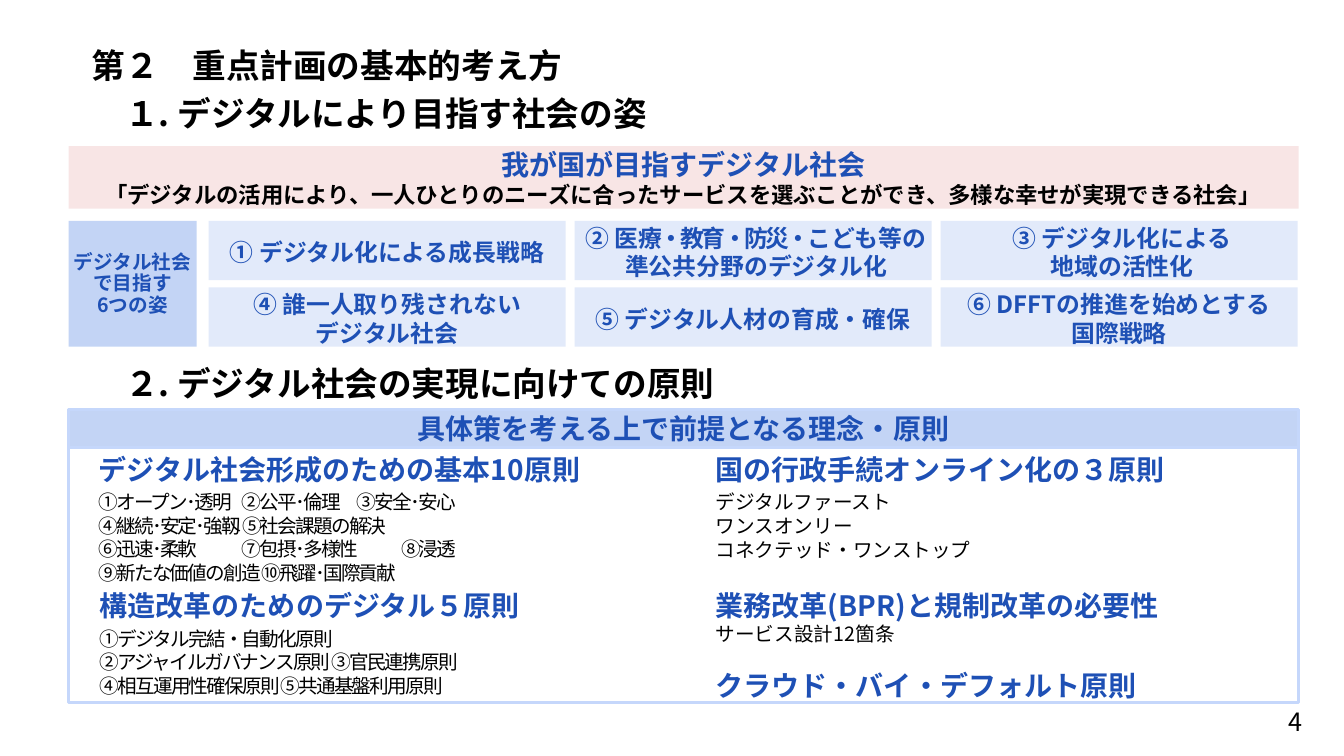
from lxml.etree import SubElement
from pptx import Presentation
from pptx.dml.color import RGBColor
from pptx.enum.shapes import MSO_SHAPE as Preset
from pptx.enum.text import MSO_ANCHOR as Anchor, MSO_AUTO_SIZE as AutoSize, PP_ALIGN as Align
from pptx.oxml.ns import qn
from pptx.util import Inches, Pt

TITLE = "第２　重点計画の基本的考え方\n　１. デジタルにより目指す社会の姿"
SECTION = "　２. デジタル社会の実現に向けての原則"
PAGE_NUMBER = "4"
VISION = ("我が国が目指すデジタル社会",
          "「デジタルの活用により、一人ひとりのニーズに合ったサービスを選ぶことができ、"
          "多様な幸せが実現できる社会」")
GOALS_LABEL = ["デジタル社会", "で目指す", "6つの姿"]
# Each goal: its lines, then its right inset; a line may be (text, tracking) pieces
GOALS = [
    (["① デジタル化による成長戦略"], 0.1),
    ([[("② 医", 0), ("療・教育・防災・こ", -2), ("ども等の", 0)],
      "準公共分野のデジタル化"], 0.04),
    (["③ デジタル化による", "地域の活性化"], 0.04),
    (["④ 誰一人取り残されない", "デジタル社会"], 0.1),
    (["⑤ デジタル人材の育成・確保"], 0.1),
    (["⑥ DFFTの推進を始めとする", "国際戦略"], 0.1),
]
PRINCIPLES_HEADER = "具体策を考える上で前提となる理念・原則"
# Box, heading, body, body tracking, space after heading
PRINCIPLES = [
    ((0.88, 4.44, 6.23, 0.93), "デジタル社会形成のための基本10原則",
     "①オープン･透明\t②公平･倫理\t③安全･安心\n④継続･安定･強靱 ⑤社会課題の解決\n"
     "⑥迅速･柔軟\t⑦包摂･多様性\t⑧浸透\n⑨新たな価値の創造 ⑩飛躍･国際貢献", -1.3, 3),
    ((0.89, 5.79, 5.91, 1.19), "構造改革のためのデジタル５原則",
     "①デジタル完結・自動化原則\n②アジャイルガバナンス原則 ③官民連携原則\n"
     "④相互運用性確保原則 ⑤共通基盤利用原則", -1.3, 3),
    ((7, 4.44, 5.5, 0.65), "国の行政手続オンライン化の３原則",
     "デジタルファースト\nワンスオンリー\nコネクテッド・ワンストップ", 0, 3),
    ((7, 5.79, 5.72, 0.67), "業務改革(BPR)と規制改革の必要性", "サービス設計12箇条", 0, 0),
    ((7, 6.58, 5.65, 0.44), "クラウド・バイ・デフォルト原則", "", 0, 0),
]
TAB_STOPS = (1.42, 2.56)

THEME = {
    "font": "Noto Sans CJK JP",
    "ink": RGBColor.from_string("000000"),
    "blue": RGBColor.from_string("1E50B5"),
    "vision": RGBColor.from_string("C00000"),
    "label": RGBColor.from_string("C3D4F5"),
    "goal": RGBColor.from_string("E2EAFA"),
    "frame": RGBColor.from_string("C5D7FB"),
    "title_size": 24, "heading_size": 20, "page_size": 18,
    "goal_size": 17, "vision_size": 16, "body_size": 14,
}
LEFT, WIDTH = 0.68, 12.2
GOAL_LEFT, GOAL_TOP, GOAL_W, GOAL_H = 2.07, 2.19, 3.54, 0.59
GOAL_STEP_X, GOAL_STEP_Y, GOAL_COLUMNS = 3.63, 0.66, 3


def apply(target, formats):
    for name, value in formats.items():
        setattr(target, name, value)


def add_piece(paragraph, text, size, color, bold, tracking):
    run = paragraph.add_run()
    run.text = text
    apply(run.font, {"size": Pt(size), "bold": bold, "name": THEME["font"]})
    run.font.color.rgb = THEME[color]
    props = run.font._element
    SubElement(props, qn("a:ea"), typeface=THEME["font"])
    if tracking:
        props.set("spc", str(round(tracking * 100)))


def write(frame, line, size, color, bold=True, align=Align.LEFT, leading=1.2,
          after=0, tracking=0):
    """Add one paragraph, using the frame's first paragraph while it is empty."""
    first = frame.paragraphs[0]
    paragraph = frame.add_paragraph() if first.runs else first
    apply(paragraph, {"alignment": align, "line_spacing": Pt(round(size * leading, 1)),
                      "space_before": Pt(0), "space_after": Pt(after)})
    pieces = [(line, tracking)] if isinstance(line, str) else line
    for text, piece_tracking in pieces:
        for index, part in enumerate(text.split("\n")):
            if index:
                paragraph.add_line_break()
            add_piece(paragraph, part, size, color, bold, piece_tracking)
    return paragraph


def set_tab_stops(paragraph):
    tabs = SubElement(paragraph._p.get_or_add_pPr(), qn("a:tabLst"))
    for stop in TAB_STOPS:
        SubElement(tabs, qn("a:tab"), pos=str(Inches(stop)), algn="l")


def add_text(slide, box, anchor=Anchor.TOP):
    frame = slide.shapes.add_textbox(*map(Inches, box)).text_frame
    apply(frame, {"word_wrap": True, "vertical_anchor": anchor})
    return frame


def add_panel(slide, box, fill=None, line=None, margins=(0.1, 0.05, 0.1, 0.05)):
    panel = slide.shapes.add_shape(Preset.RECTANGLE, *map(Inches, box))
    panel.shadow.inherit = False
    if fill:
        panel.fill.solid()
        panel.fill.fore_color.rgb = THEME[fill]
    else:
        panel.fill.background()
    if line:
        panel.line.color.rgb = THEME[line]
        panel.line.width = Pt(2.25)
    else:
        panel.line.fill.background()
    sides = ("margin_left", "margin_top", "margin_right", "margin_bottom")
    apply(panel.text_frame, dict(zip(sides, map(Inches, margins))))
    apply(panel.text_frame, {"word_wrap": True, "vertical_anchor": Anchor.MIDDLE})
    return panel


def add_headings(slide):
    title = slide.shapes.title
    apply(title, dict(zip(("left", "top", "width", "height"),
                          map(Inches, (0.81, 0.32, 12.95, 0.51)))))
    apply(title.text_frame, {"word_wrap": True, "vertical_anchor": Anchor.TOP,
                             "auto_size": AutoSize.NONE})
    write(title.text_frame, TITLE, THEME["title_size"], "ink", leading=1.43)
    write(add_text(slide, (0.81, 3.55, 6.88, 0.5)), SECTION, THEME["title_size"], "ink")
    write(add_text(slide, (11.59, 6.96, 1.43, 0.4), Anchor.MIDDLE), PAGE_NUMBER,
          THEME["page_size"], "ink", bold=False, align=Align.RIGHT)


def add_vision(slide):
    panel = add_panel(slide, (LEFT, 1.45, WIDTH, 0.62), "vision")
    color = panel._element.spPr.find(qn("a:solidFill"))[0]
    SubElement(color, qn("a:alpha"), val="10000")
    panel.text_frame.word_wrap = False
    heading, statement = VISION
    write(panel.text_frame, heading, THEME["heading_size"], "blue", align=Align.CENTER)
    write(panel.text_frame, statement, THEME["vision_size"], "ink", align=Align.CENTER)


def add_goals(slide):
    label = add_panel(slide, (LEFT, GOAL_TOP, 1.27, 1.25), "label",
                      margins=(0.04, 0.05, 0.04, 0.05))
    for line in GOALS_LABEL:
        write(label.text_frame, line, THEME["body_size"], "blue",
              align=Align.CENTER, leading=1.1)
    for index, (lines, right_inset) in enumerate(GOALS):
        row, column = divmod(index, GOAL_COLUMNS)
        box = (GOAL_LEFT + column * GOAL_STEP_X, GOAL_TOP + row * GOAL_STEP_Y,
               GOAL_W, GOAL_H)
        goal = add_panel(slide, box, "goal", margins=(0.1, 0.08, right_inset, 0.05))
        for line in lines:
            write(goal.text_frame, line, THEME["goal_size"], "blue", align=Align.CENTER)


def add_principles(slide):
    for box, heading, body, tracking, gap in PRINCIPLES:
        frame = add_text(slide, box)
        write(frame, heading, THEME["heading_size"], "blue", after=gap)
        if body:
            rules = write(frame, body, THEME["body_size"], "ink", bold=False,
                          tracking=tracking)
            if "\t" in body:
                set_tab_stops(rules)
    add_panel(slide, (LEFT, 4.25, WIDTH, 2.72), line="frame")
    header = add_panel(slide, (LEFT, 4.06, WIDTH, 0.38), "label", "frame")
    write(header.text_frame, PRINCIPLES_HEADER, THEME["heading_size"], "blue",
          align=Align.CENTER)


def main():
    deck = Presentation()
    apply(deck, {"slide_width": Inches(13.33), "slide_height": Inches(7.5)})
    slide = deck.slides.add_slide(deck.slide_layouts.get_by_name("Title Only"))
    add_headings(slide)
    add_vision(slide)
    add_goals(slide)
    add_principles(slide)
    deck.save("out.pptx")


if __name__ == "__main__":
    main()
